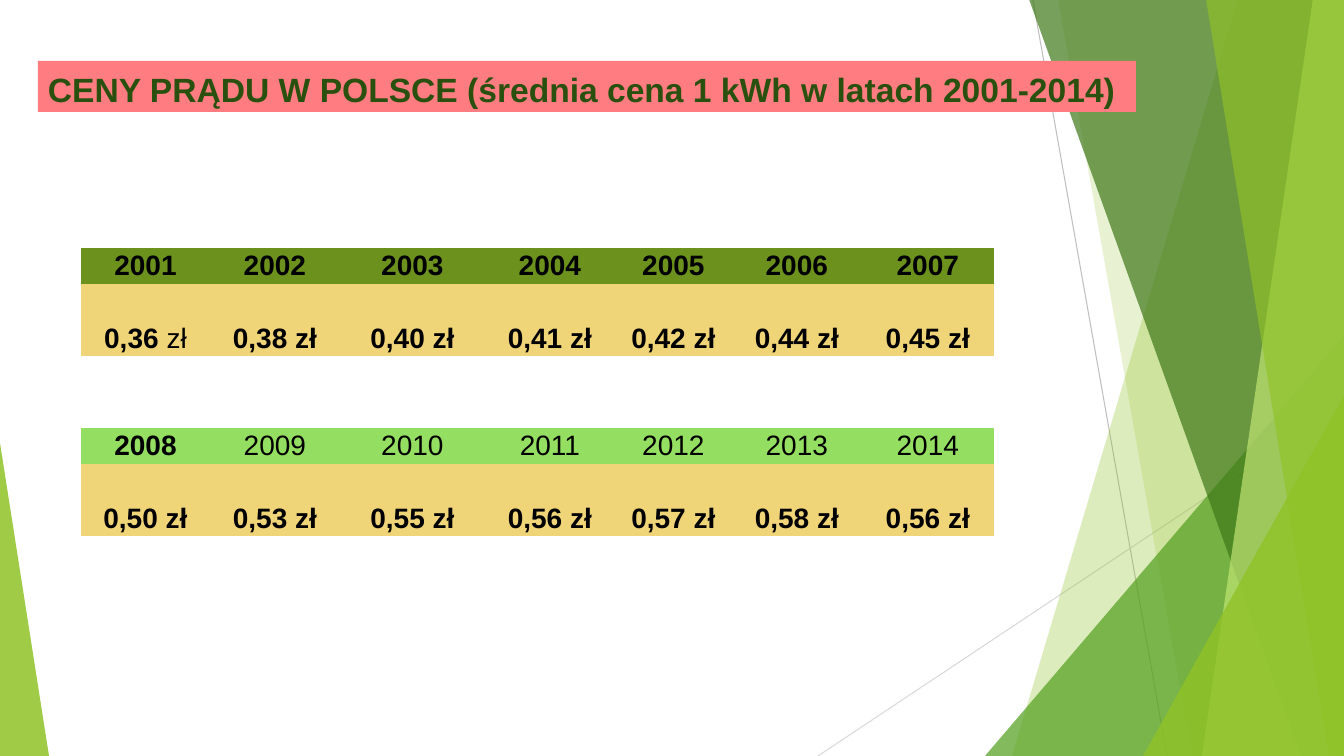
from lxml.etree import SubElement as Sub
from pptx import Presentation
from pptx.dml.color import RGBColor
from pptx.enum.shapes import MSO_CONNECTOR as Link, MSO_SHAPE as Form
from pptx.enum.text import MSO_ANCHOR as Anchor, PP_ALIGN as Align
from pptx.oxml.ns import qn
from pptx.util import Emu, Pt

WIDE, HIGH = 1344, 756
SCALE = 12192000 / WIDE
FONT = "Arial"
PLAIN = "{2D5ABB26-0587-4C30-8999-92F81FD0307C}"

BLACK = RGBColor(0x00, 0x00, 0x00)
LIME = RGBColor(0x90, 0xC2, 0x26)
LEAF = RGBColor(0x54, 0xA0, 0x21)
PINE = RGBColor(0x3F, 0x78, 0x19)
PALE = RGBColor(0xC0, 0xE4, 0x74)
GREY = RGBColor(0xBF, 0xBF, 0xBF)
MIST = RGBColor(0xD9, 0xD9, 0xD9)
PINK = RGBColor(0xFF, 0x7C, 0x80)
MOSS = RGBColor(0x2A, 0x50, 0x10)
OLIVE = RGBColor(0x6C, 0x92, 0x1D)
MINT = RGBColor(0x94, 0xDE, 0x61)
SAND = RGBColor(0xF0, 0xD5, 0x78)

TITLE = "CENY PRĄDU W POLSCE (średnia cena 1 kWh w latach 2001-2014)"
EARLY = ["0,36", "0,38", "0,40", "0,41", "0,42", "0,44", "0,45"]
LATE = ["0,50", "0,53", "0,55", "0,56", "0,57", "0,58", "0,56"]
COLS = [129, 130, 145, 130, 117, 130, 132]
ROWS = [36, 72, 72, 36, 72]


def px(num):
    return Emu(round(num * SCALE))


def paint(shape, color, alpha=100):
    shape.shadow.inherit = False
    shape.line.fill.background()
    shape.fill.solid()
    shape.fill.fore_color.rgb = color
    if alpha < 100:
        tone = shape.fill._xPr.find(".//" + qn("a:srgbClr"))
        Sub(tone, qn("a:alpha")).set("val", str(alpha * 1000))


def style(run, size, color, bold):
    font = run.font
    font.name, font.size, font.bold = FONT, Pt(size), bold
    font.color.rgb = color


def rule(slide, start, end, color):
    line = slide.shapes.add_connector(Link.STRAIGHT, *map(px, start + end))
    line.line.color.rgb = color
    line.line.width = Pt(0.75)
    Sub(line._element.spPr, qn("a:effectLst"))


def panel(slide, box, top, foot, color, alpha):
    left, head, wide, high = box
    right, base = left + wide, head + high
    pen = slide.shapes.build_freeform(px(left + top), px(head - 1))
    pen.add_line_segments([(px(right), px(head - 1)), (px(right), px(base)),
                           (px(left + foot), px(base))])
    paint(pen.convert_to_shape(), color, alpha)


def wedge(slide, box, wide, high, peak, color, alpha):
    left, top, full, tall = box
    shape = slide.shapes.add_shape(
        Form.ISOSCELES_TRIANGLE, px(left + peak * (full - wide)),
        px(top + tall - high), px(wide), px(high))
    shape.adjustments[0] = peak
    paint(shape, color, alpha)


def facets(slide, box):
    left, top, wide, high = box
    right, base = left + wide, top + high
    rule(slide, (left + 215, top), (left + 349, base), GREY)
    rule(slide, (right, top + 406), (left, base), MIST)
    panel(slide, box, 420, 194, LIME, 30)
    panel(slide, box, 240, 374, LIME, 20)
    wedge(slide, box, 359, 420, 1, LEAF, 72)
    panel(slide, box, 211, 483, PINE, 70)
    panel(slide, box, 495, 384, PALE, 70)
    panel(slide, box, 388, 511, LIME, 65)
    wedge(slide, box, 201, 360, 1, LIME, 80)


def banner(slide, box):
    shape = slide.shapes.add_shape(Form.RECTANGLE, *map(px, box))
    paint(shape, PINK)
    frame = shape.text_frame
    frame.text = TITLE
    frame.word_wrap = True
    frame.vertical_anchor = Anchor.TOP
    para = frame.paragraphs[0]
    para.alignment = Align.LEFT
    para.line_spacing = 1.07
    style(para.runs[0], 24, MOSS, True)


def fill(cell, text, color, bold, unit=None):
    cell.fill.solid()
    cell.fill.fore_color.rgb = color
    cell.margin_left = cell.margin_right = px(7)
    cell.margin_top, cell.margin_bottom = 0, px(2 if unit else 0)
    cell.vertical_anchor = Anchor.BOTTOM if unit else Anchor.TOP
    para = cell.text_frame.paragraphs[0]
    para.text = text
    para.alignment = Align.CENTER
    para.line_spacing = 1.07
    style(para.runs[0], 20, BLACK, bold)
    if unit:
        run = para.add_run()
        run.text = " zł"
        style(run, 20, BLACK, unit == "bold")


def prices(slide, box):
    grid = slide.shapes.add_table(len(ROWS), len(COLS), *map(px, box)).table
    grid.first_row = grid.horz_banding = False
    grid._tbl.tblPr.find(qn("a:tableStyleId")).text = PLAIN
    for col, wide in zip(grid.columns, COLS):
        col.width = px(wide)
    for row, high in zip(grid.rows, ROWS):
        row.height = px(high)
    for top, year, costs, color in ((0, 2001, EARLY, OLIVE),
                                    (3, 2008, LATE, MINT)):
        for num, cost in enumerate(costs):
            fill(grid.cell(top, num), str(year + num), color,
                 top == 0 or num == 0)
            unit = "light" if top == num == 0 else "bold"
            fill(grid.cell(top + 1, num), cost, SAND, True, unit)


def main():
    deck = Presentation()
    deck.slide_width, deck.slide_height = px(WIDE), px(HIGH)
    slide = deck.slides.add_slide(deck.slide_layouts[6])
    facets(slide, (818, 0, WIDE - 818, HIGH))
    wedge(slide, (0, 0, WIDE, HIGH), 49, 313, 0, LIME, 85)
    banner(slide, (38, 61, 1098, 51))
    prices(slide, (81, 248, sum(COLS), sum(ROWS)))
    deck.save("out.pptx")


if __name__ == "__main__":
    main()
